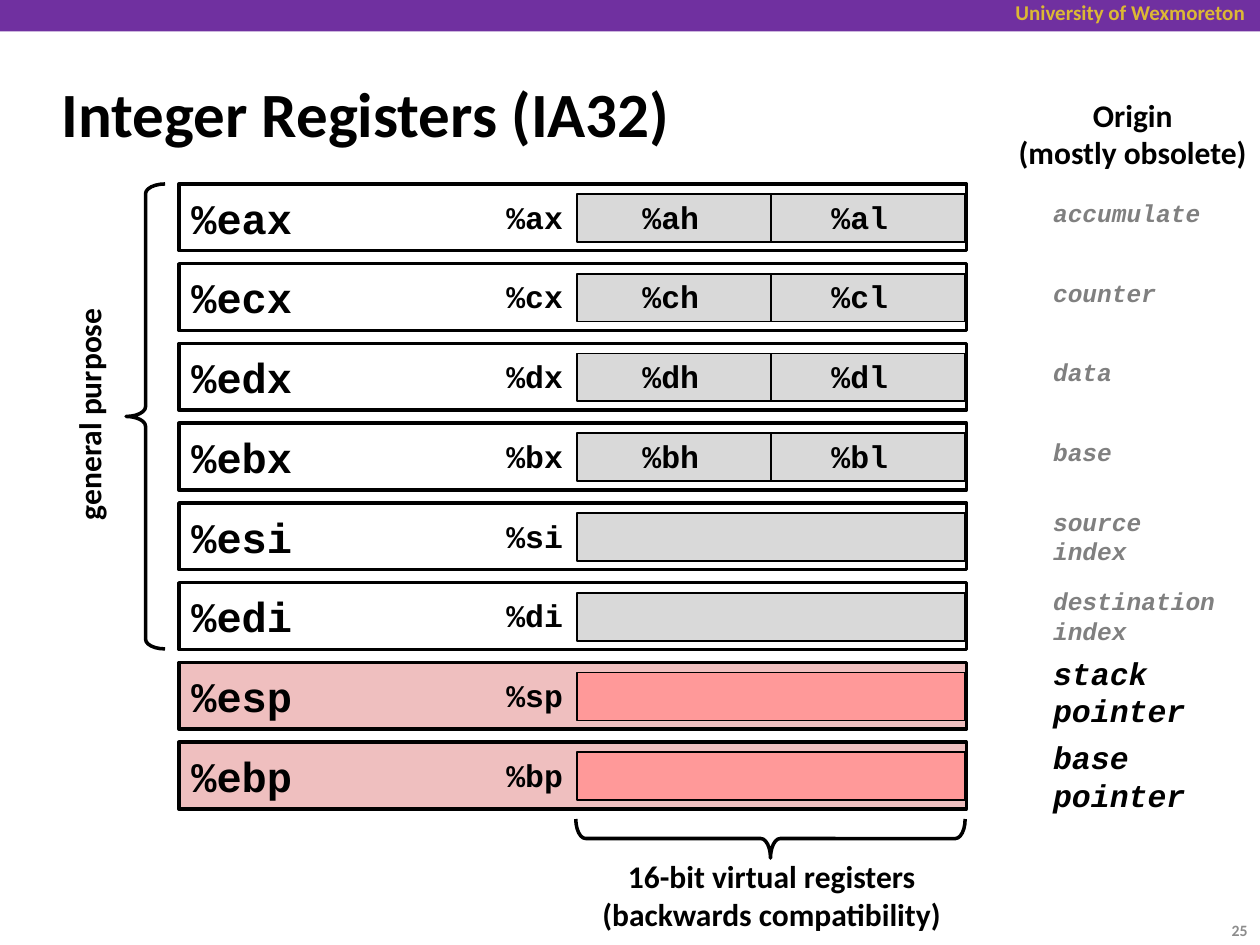
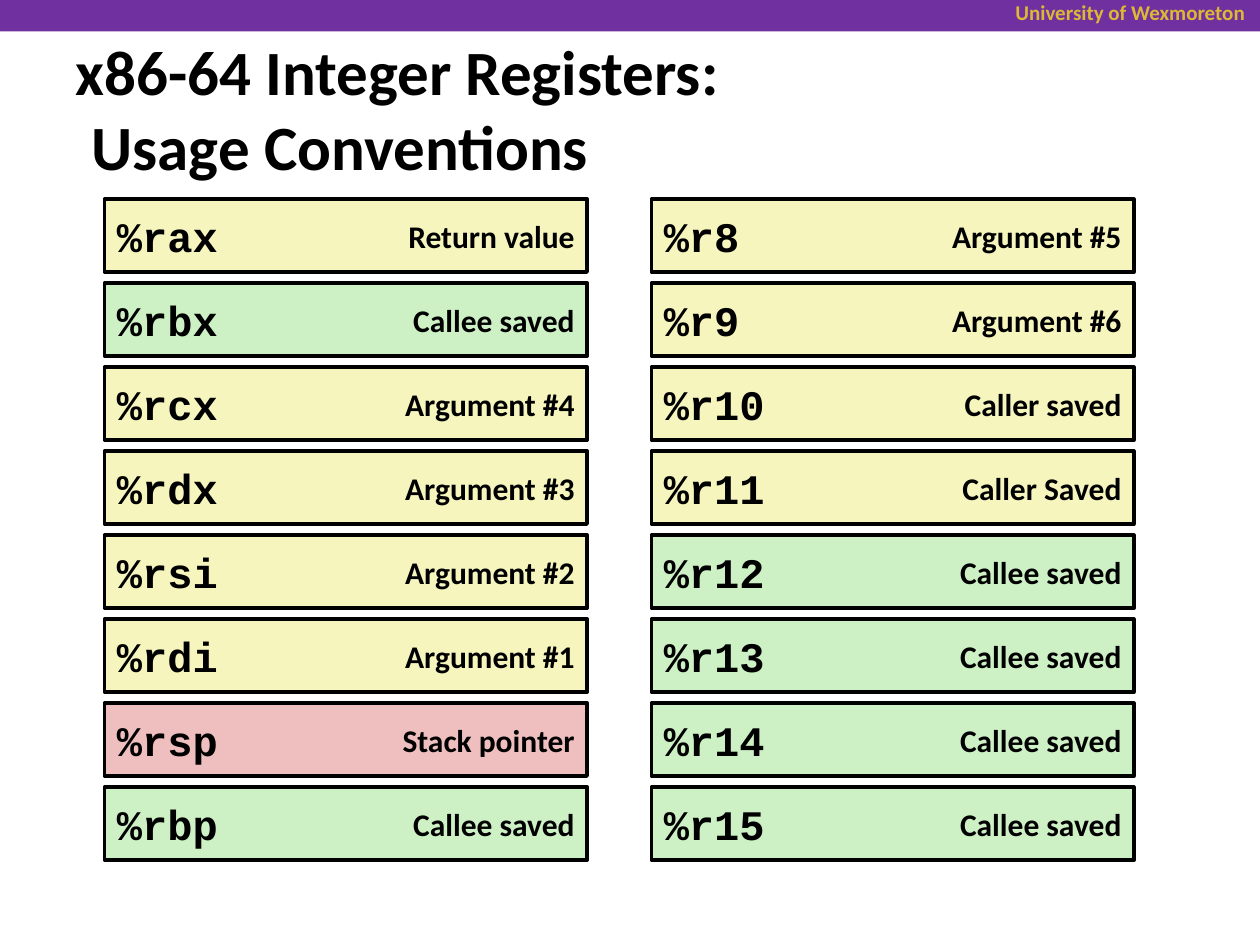
from lxml import etree
from pptx import Presentation
from pptx import util as u
from pptx.dml import color as dml_color
from pptx.enum import shapes, text
from pptx.oxml import ns

BLACK, GRAY, PAGE_GRAY = "000000", "808080", "8C8C8C"
PURPLE, GOLD = "7030A0", "DCB834"
WHITE, SILVER, PINK, SALMON = "FFFFFF", "D9D9D9", "EFBFBF", "FF9999"
YELLOW, GREEN = "F6F5BD", "CDF1C5"

LABEL = {"name": "Calibri", "size": u.Pt(18), "bold": True}
TITLE = {**LABEL, "size": u.Pt(36)}
HEADER = {**LABEL, "size": u.Pt(12)}
PAGE = {**LABEL, "size": u.Pt(9)}
REGISTER = {"name": "Courier New", "size": u.Pt(24), "bold": True}
PART = {**REGISTER, "size": u.Pt(18)}
ORIGIN = {**REGISTER, "size": u.Pt(14), "italic": True}
POINTER = {**ORIGIN, "size": u.Pt(18)}

LEFT, CENTER, RIGHT = (
    text.PP_ALIGN.LEFT, text.PP_ALIGN.CENTER, text.PP_ALIGN.RIGHT)

IA32_TOP, IA32_STEP, IA32_HEIGHT = 1.46, 0.633, 0.53
ORIGIN_WIDTH = 1.7
IA32_REGISTERS = [
    ("ax", True, "accumulate", 0.06),
    ("cx", True, "counter", 0.06),
    ("dx", True, "data", 0.06),
    ("bx", True, "base", 0.06),
    ("si", False, "source\nindex", -0.02),
    ("di", False, "destination\nindex", -0.02),
    ("sp", False, "stack\npointer", -0.12),
    ("bp", False, "base\npointer", -0.08),
]

X64_TOP, X64_STEP, X64_WIDTH, X64_HEIGHT = 1.58, 2 / 3, 3.83, 0.58
USAGE_WIDTH = 1.9
X64_COLUMNS = {
    0.83: [
        ("%rax", "Return value", YELLOW),
        ("%rbx", "Callee saved", GREEN),
        ("%rcx", "Argument #4", YELLOW),
        ("%rdx", "Argument #3", YELLOW),
        ("%rsi", "Argument #2", YELLOW),
        ("%rdi", "Argument #1", YELLOW),
        ("%rsp", "Stack pointer", PINK),
        ("%rbp", "Callee saved", GREEN),
    ],
    5.17: [
        ("%r8", "Argument #5", YELLOW),
        ("%r9", "Argument #6", YELLOW),
        ("%r10", "Caller saved", YELLOW),
        ("%r11", "Caller Saved", YELLOW),
        ("%r12", "Callee saved", GREEN),
        ("%r13", "Callee saved", GREEN),
        ("%r14", "Callee saved", GREEN),
        ("%r15", "Callee saved", GREEN),
    ],
}


def paint(fill, color):
    """Give a fill a solid hex colour."""
    fill.solid()
    fill.fore_color.rgb = dml_color.RGBColor.from_string(color)


def apply_format(target, values):
    """Set each named attribute of the target."""
    for name, value in values.items():
        setattr(target, name, value)


def write(frame, content, font, color=BLACK, align=LEFT):
    """Write one formatted paragraph for each line of the content."""
    for index, line in enumerate(content.split("\n")):
        paragraph = frame.add_paragraph() if index else frame.paragraphs[0]
        paragraph.text = line
        paragraph.alignment = align
        for run in paragraph.runs:
            apply_format(run.font, font)
            paint(run.font.fill, color)


def add_label(slide, box, content, font, color=BLACK, align=LEFT,
              rotation=0, wrap=False, anchor=text.MSO_ANCHOR.TOP):
    """Add a text box and return it."""
    shape = slide.shapes.add_textbox(*map(u.Inches, box))
    shape.rotation = rotation
    apply_format(shape.text_frame, {
        "word_wrap": wrap, "vertical_anchor": anchor})
    write(shape.text_frame, content, font, color, align)
    return shape


def add_block(slide, box, fill, line=BLACK, width=1):
    """Add a filled rectangle, outlined unless line is None."""
    shape = slide.shapes.add_shape(
        shapes.MSO_SHAPE.RECTANGLE, *map(u.Inches, box))
    shape.shadow.inherit = False
    paint(shape.fill, fill)
    if line:
        paint(shape.line.fill, line)
        shape.line.width = u.Pt(width)
    else:
        shape.line.fill.background()
    return shape


def add_register(slide, box, name, fill):
    """Add a register rectangle holding its name."""
    shape = add_block(slide, box, fill, width=2)
    apply_format(shape.text_frame, {
        "word_wrap": False, "vertical_anchor": text.MSO_ANCHOR.MIDDLE})
    write(shape.text_frame, name, REGISTER)


def add_divider(slide, block):
    """Split a block in half with a vertical line."""
    middle = block.left + block.width // 2
    connector = slide.shapes.add_connector(
        shapes.MSO_CONNECTOR.STRAIGHT,
        middle, block.top, middle, block.top + block.height)
    connector.begin_connect(block, 0)
    connector.end_connect(block, 2)
    paint(connector.line.fill, BLACK)
    connector.line.width = u.Pt(1)
    etree.SubElement(connector._element.spPr, ns.qn("a:effectLst"))


def add_brace(slide, box, rotation):
    """Add a rotated curly brace."""
    shape = slide.shapes.add_shape(
        shapes.MSO_SHAPE.RIGHT_BRACE, *map(u.Inches, box))
    shape.shadow.inherit = False
    shape.rotation = rotation
    shape.adjustments[0], shape.adjustments[1] = 0.25, 0.5
    shape.fill.background()
    paint(shape.line.fill, BLACK)
    shape.line.width = u.Pt(2)


def add_slide(presentation, title, box):
    """Add a slide with the shared band, header and title style."""
    slide = presentation.slides.add_slide(presentation.slide_layouts[6])
    add_block(slide, (0, 0, 10, 0.25), PURPLE, line=None)
    add_label(slide, (7.33, -0.05, 2.65, 0.3), "University of Wexmoreton",
              HEADER, GOLD, RIGHT, wrap=True)
    shape = add_label(slide, box, title, TITLE, wrap=True,
                      anchor=text.MSO_ANCHOR.MIDDLE)
    properties = shape.text_frame.paragraphs[0]._p.get_or_add_pPr()
    properties.set("marL", str(u.Inches(0.13)))
    properties.set("indent", str(u.Inches(-0.13)))
    return slide


def add_ia32_row(slide, top, name, has_halves, origin, origin_offset):
    """Add one 32-bit register with its 16-bit part and origin."""
    is_pointer = name in ("sp", "bp")
    add_register(slide, (1.42, top, 6.25, IA32_HEIGHT), "%e" + name,
                 PINK if is_pointer else WHITE)
    block = add_block(slide, (4.58, top + 0.08, 3.08, 0.38),
                      SALMON if is_pointer else SILVER)
    parts = {3.92: name}
    if has_halves:
        add_divider(slide, block)
        parts.update({5: name[0] + "h", 6.5: name[0] + "l"})
    for left, part in parts.items():
        add_label(slide, (left, top + 0.06, 0.65, 0.4), "%" + part, PART)
    font = POINTER if is_pointer else ORIGIN
    height = 0.1 + len(origin.split("\n")) * font["size"].inches * 1.2
    add_label(slide, (8.26, top + origin_offset, ORIGIN_WIDTH, height),
              origin, font, BLACK if is_pointer else GRAY, wrap=True)


def build_ia32(presentation):
    """Build the slide of 32-bit registers."""
    slide = add_slide(presentation, "Integer Registers (IA32)",
                      (0.39, 0.48, 9.19, 0.83))
    for index, register in enumerate(IA32_REGISTERS):
        add_ia32_row(slide, IA32_TOP + index * IA32_STEP, *register)
    add_brace(slide, (5.96, 5.11, 0.31, 3.09), 90)
    add_label(slide, (4.67, 6.75, 2.91, 0.71),
              "16-bit virtual registers\n(backwards compatibility)",
              LABEL, align=CENTER)
    add_brace(slide, (1, IA32_TOP, 0.31, 3.69), 180)
    add_label(slide, (-0.24, 3.08, 1.89, 0.4), "general purpose", LABEL,
              rotation=270)
    add_label(slide, (7.98, 0.71, 2.02, 0.71), "Origin\n(mostly obsolete)",
              LABEL, align=CENTER)
    add_label(slide, (9.33, 7.18, 0.67, 0.4), "25", PAGE, PAGE_GRAY, RIGHT,
              wrap=True, anchor=text.MSO_ANCHOR.MIDDLE)


def build_x64(presentation):
    """Build the slide of 64-bit register conventions."""
    slide = add_slide(
        presentation, "x86-64 Integer Registers:\vUsage Conventions",
        (0.5, 0.54, 8.75, 0.63))
    for left, registers in X64_COLUMNS.items():
        usage_left = left + X64_WIDTH - USAGE_WIDTH
        for index, (name, usage, fill) in enumerate(registers):
            top = X64_TOP + index * X64_STEP
            add_register(slide, (left, top, X64_WIDTH, X64_HEIGHT),
                         name, fill)
            add_label(slide, (usage_left, top + 0.09, USAGE_WIDTH, 0.4),
                      usage, LABEL, align=RIGHT, wrap=True)


def main():
    """Build and save the presentation."""
    presentation = Presentation()
    presentation.slide_width = u.Inches(10)
    presentation.slide_height = u.Inches(7.5)
    build_ia32(presentation)
    build_x64(presentation)
    presentation.save("out.pptx")


if __name__ == "__main__":
    main()
